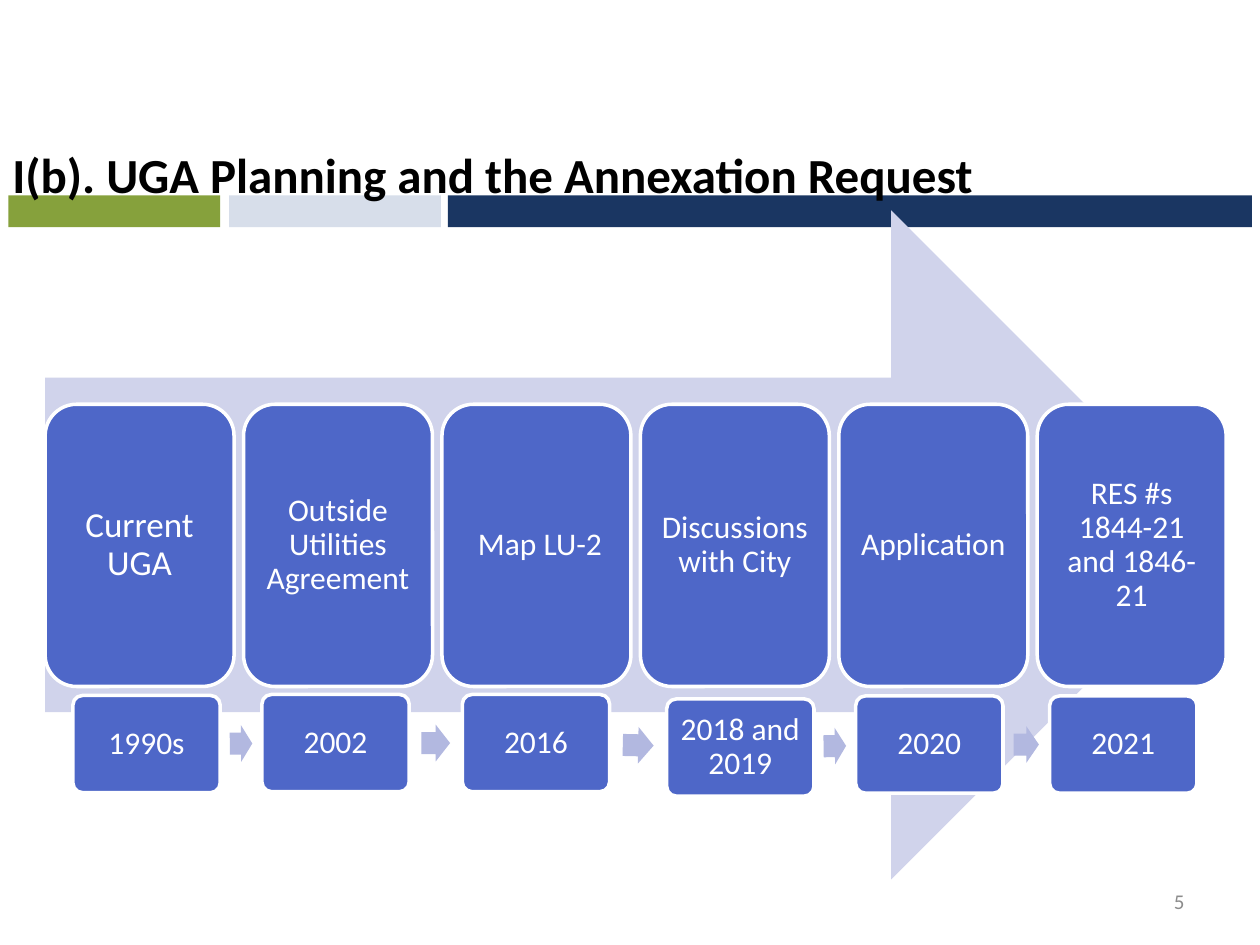
"""Build the UGA planning timeline slide."""
from math import atan2, degrees

from pptx import Presentation
from pptx.dml.color import RGBColor
from pptx.enum.shapes import MSO_SHAPE
from pptx.enum.text import MSO_ANCHOR, PP_ALIGN
from pptx.util import Cm, Pt

COLORS = {
    "navy": "1A3662", "green": "86A13C", "mist": "D7DEEA",
    "lavender": "D0D3EB", "blue": "4E67C8", "link": "B2B8E0",
    "white": "FFFFFF", "black": "000000", "gray": "8C8C8C",
}


def add_block(kind, left, top, width, height, color, outlined=False):
    shape = page.shapes.add_shape(kind, Cm(left), Cm(top), Cm(width), Cm(height))
    shape.shadow.inherit = False
    shape.fill.solid()
    shape.fill.fore_color.rgb = RGBColor.from_string(COLORS[color])
    if outlined:
        shape.line.color.rgb = RGBColor.from_string(COLORS["white"])
        shape.line.width = Pt(2)
    else:
        shape.line.fill.background()
    return shape


def write_text(box, text, size=18, color="white", bold=False, align=PP_ALIGN.CENTER,
               anchor=MSO_ANCHOR.MIDDLE, spacing=0.9, inset=None):
    frame = box.text_frame
    frame.word_wrap = True
    frame.vertical_anchor = anchor
    if inset is not None:
        frame.margin_left = frame.margin_right = Cm(inset)
        frame.margin_top = frame.margin_bottom = Cm(inset)
    para = frame.paragraphs[0]
    para.alignment = align
    para.line_spacing = spacing
    span = para.add_run()
    span.text = text
    span.font.name = "Calibri"
    span.font.size = Pt(size)
    span.font.bold = bold
    span.font.color.rgb = RGBColor.from_string(COLORS[color])


deck = Presentation()
deck.slide_width = Cm(25.4)
deck.slide_height = Cm(19.05)
page = deck.slides.add_slide(deck.slide_layouts[6])

for left, width, color in [(9.03, 16.21, "navy"), (0.17, 4.27, "green"), (4.62, 4.27, "mist")]:
    add_block(MSO_SHAPE.RECTANGLE, left, 3.94, width, 0.64, color)

number_box = page.shapes.add_textbox(Cm(18.21), Cm(17.65), Cm(5.92), Cm(1.02))
write_text(number_box, "5", size=12, color="gray", align=PP_ALIGN.RIGHT, spacing=1.0)

title_box = page.shapes.add_textbox(Cm(0), Cm(2.79), Cm(25.4), Cm(1.45))
write_text(title_box, "I(b). UGA Planning and the Annexation Request", size=28, color="black",
           bold=True, align=PP_ALIGN.LEFT, anchor=MSO_ANCHOR.TOP, spacing=1.0)

add_block(MSO_SHAPE.RIGHT_ARROW, 0.91, 4.24, 23.8, 13.49, "lavender")

steps = [("Current UGA", 20), ("Outside Utilities Agreement", 18), (" Map LU-2", 18),
         ("Discussions with City", 18), ("Application", 18), ("RES #s 1844-21 and 1846-21", 18)]
for index, (label, size) in enumerate(steps):
    card = add_block(MSO_SHAPE.ROUNDED_RECTANGLE, 0.91 + 4 * index, 8.15, 3.81, 5.69, "blue", True)
    write_text(card, label, size=size, inset=0.19)

year_width, year_height, link_height = 2.97, 1.96, 0.74
years = [("1990s", 1.47, 14.02), ("2002", 5.28, 14), ("2016", 9.32, 14),
         ("2018 and 2019", 13.44, 14.09), ("2020", 17.25, 14.03), ("2021", 21.16, 14.03)]
for label, left, top in years:
    tile = add_block(MSO_SHAPE.ROUNDED_RECTANGLE, left, top, year_width, year_height, "blue", True)
    tile.adjustments[0] = 0.1
    write_text(tile, label, inset=0.18)

for (_, left, top), (_, next_left, next_top) in zip(years, years[1:]):
    gap = next_left - left - year_width
    link_width = 0.54 * gap
    link_left = left + year_width + (gap - link_width) / 2
    link_top = (top + next_top + year_height - link_height) / 2
    link_top += (year_height - link_height) / 2 - (year_height - link_height) / 2
    link_top = (top + next_top) / 2 + (year_height - link_height) / 2
    link = add_block(MSO_SHAPE.RIGHT_ARROW, link_left, link_top, link_width, link_height, "link")
    link.adjustments[0] = 0.6
    link.rotation = degrees(atan2(next_top - top, next_left - left))

deck.save("out.pptx")
